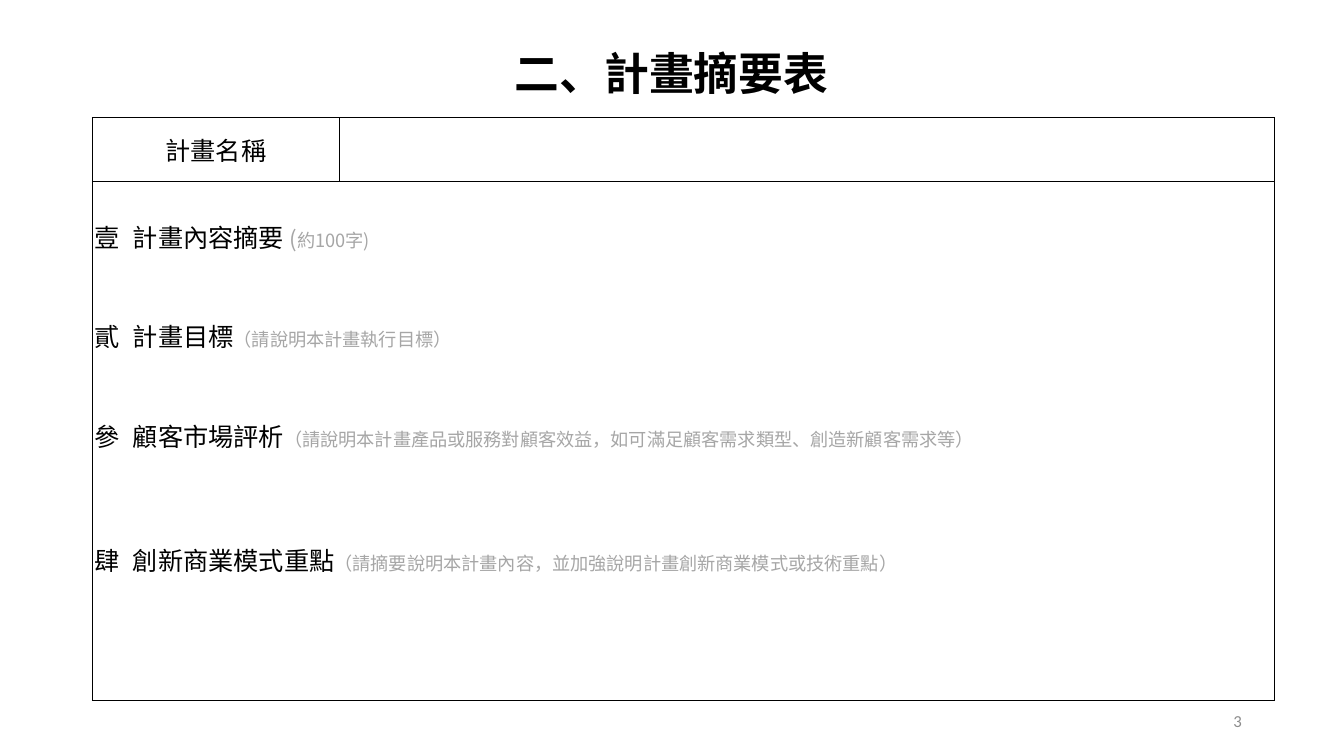
"""Build the project summary table slide."""
from typing import NamedTuple

from lxml.etree import SubElement
from pptx import Presentation
from pptx.dml.color import RGBColor
from pptx.enum.text import MSO_ANCHOR as Anchor, PP_ALIGN as Align
from pptx.oxml.ns import qn
from pptx.util import Cm, Pt

BLACK = RGBColor(0x00, 0x00, 0x00)
HINT_GREY = RGBColor(0xA6, 0xA6, 0xA6)
NUMBER_GREY = RGBColor(0x8C, 0x8C, 0x8C)
CJK_FONT = "Noto Sans CJK SC"
NUMBER_FONT = "Calibri"


class Piece(NamedTuple):
    text: str
    size: float
    color: RGBColor


class Section(NamedTuple):
    space_before: float
    pieces: tuple[Piece, ...]


def heading(text: str) -> Piece:
    return Piece(text, 18, BLACK)


def hint(text: str, size: float = 13) -> Piece:
    return Piece(text, size, HINT_GREY)


SECTIONS = (
    Section(0, (heading("計畫內容摘要 "), hint("(", 16), hint("約100字)"))),
    Section(45, (heading("計畫目標"), hint("（請說明本計畫執行目標）"))),
    Section(45, (heading("顧客市場評析"),
                 hint("（請說明本計畫產品或服務對顧客效益，如可滿足顧客需求類型、創造新顧客需求等）"))),
    Section(63, (heading("創新商業模式重點"),
                 hint("（請摘要說明本計畫內容，並加強說明計畫創新商業模式或技術重點）"))),
)


def set_font(font, name: str, size: float, color: RGBColor, bold: bool = False) -> None:
    font.name, font.size, font.bold = name, Pt(size), bold
    font.color.rgb = color


def write_line(text_frame, text: str, align: Align, name: str, size: float,
               color: RGBColor, bold: bool = False):
    text_frame.text = text
    paragraph = text_frame.paragraphs[0]
    paragraph.alignment = align
    set_font(paragraph.font, name, size, color, bold)
    return paragraph


def write_section(paragraph, section: Section) -> None:
    paragraph.alignment = Align.JUSTIFY
    paragraph.space_before = Pt(section.space_before)
    properties = paragraph._p.get_or_add_pPr()
    properties.set("marL", str(Cm(0.97)))
    properties.set("indent", str(-Cm(0.97)))
    SubElement(properties, qn("a:buAutoNum"), type="ea1ChtPlain")
    paragraph.font.name = CJK_FONT
    for piece in section.pieces:
        run = paragraph.add_run()
        run.text = piece.text
        run.font.size = Pt(piece.size)
        run.font.color.rgb = piece.color


def format_cell(cell) -> None:
    cell.margin_left = cell.margin_right = Cm(0.05)
    cell.margin_top = cell.margin_bottom = 0
    properties = cell._tc.get_or_add_tcPr()
    for side in ("lnL", "lnR", "lnT", "lnB"):
        border = SubElement(properties, qn(f"a:{side}"), w=str(Pt(1)))
        fill = SubElement(border, qn("a:solidFill"))
        SubElement(fill, qn("a:srgbClr"), val=str(BLACK))
    cell.fill.background()


def add_title(slide) -> None:
    title = slide.shapes.title
    title.left, title.top, title.width, title.height = Cm(1.14), Cm(0), Cm(31.57), Cm(3.5)
    title.text_frame.vertical_anchor = Anchor.MIDDLE
    paragraph = write_line(title.text_frame, "二、計畫摘要表", Align.CENTER,
                           CJK_FONT, 32, BLACK, bold=True)
    paragraph.line_spacing = 1.1


def add_summary_table(slide) -> None:
    table = slide.shapes.add_table(2, 2, Cm(2.33), Cm(2.97), Cm(29.79), Cm(14.68)).table
    table.first_row = table.horz_banding = False
    for column, width in zip(table.columns, (6.22, 23.57)):
        column.width = Cm(width)
    for row, height in zip(table.rows, (1.6, 13.08)):
        row.height = Cm(height)
    for cell in table.iter_cells():
        format_cell(cell)

    label = table.cell(0, 0)
    label.vertical_anchor = Anchor.MIDDLE
    write_line(label.text_frame, "計畫名稱", Align.CENTER, CJK_FONT, 18, BLACK)

    content = table.cell(1, 0)
    content.merge(table.cell(1, 1))
    content.margin_top = Cm(0.92)
    text_frame = content.text_frame
    for index, section in enumerate(SECTIONS):
        paragraph = text_frame.add_paragraph() if index else text_frame.paragraphs[0]
        write_section(paragraph, section)


def add_slide_number(slide) -> None:
    box = slide.shapes.add_textbox(Cm(23.93), Cm(17.65), Cm(7.62), Cm(1.02))
    box.text_frame.word_wrap = True
    box.text_frame.vertical_anchor = Anchor.MIDDLE
    write_line(box.text_frame, "3", Align.RIGHT, NUMBER_FONT, 12, NUMBER_GREY)


def main() -> None:
    presentation = Presentation()
    presentation.slide_width, presentation.slide_height = Cm(33.87), Cm(19.05)
    slide = presentation.slides.add_slide(presentation.slide_layouts[5])
    add_title(slide)
    add_summary_table(slide)
    add_slide_number(slide)
    presentation.save("out.pptx")


if __name__ == "__main__":
    main()
